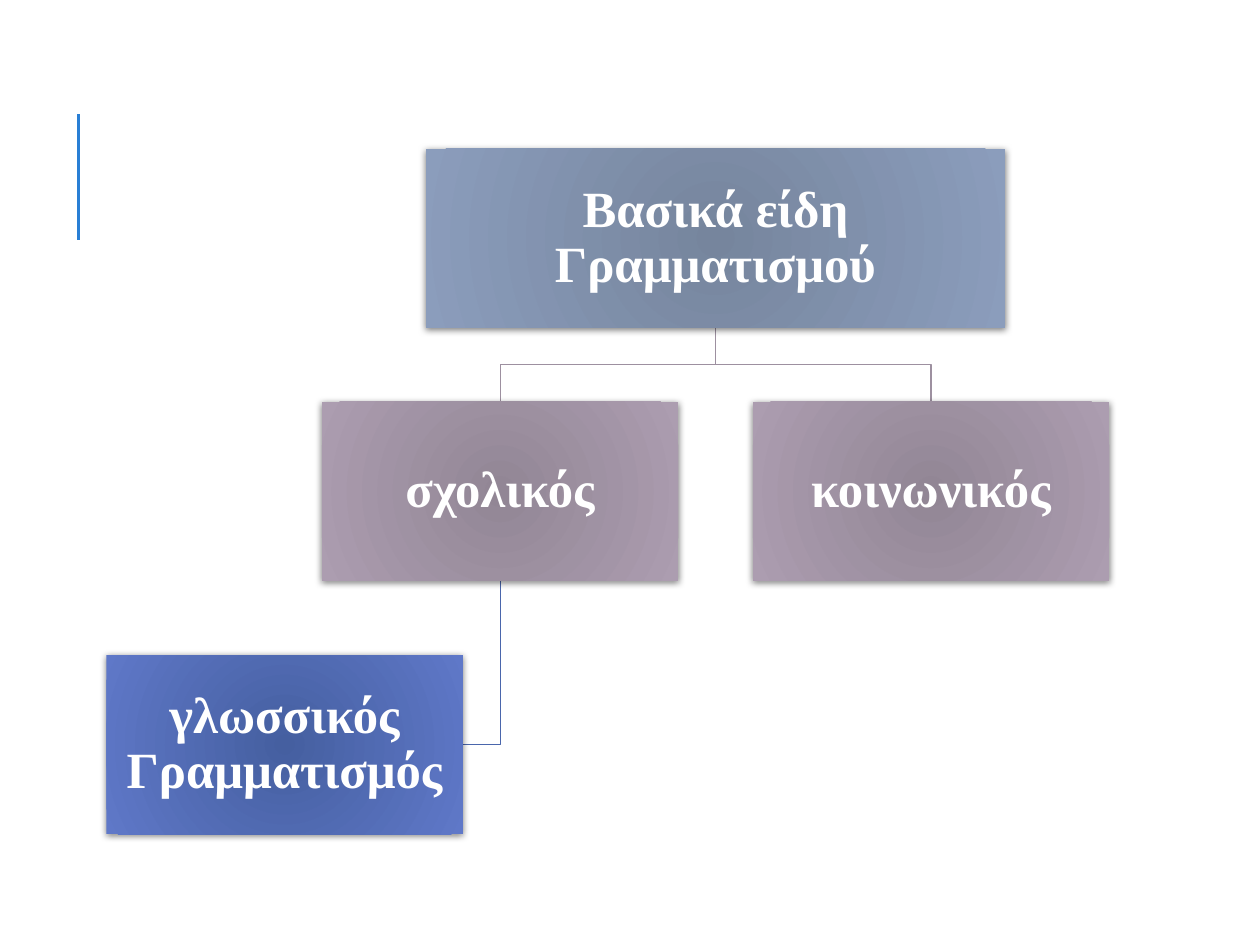
from lxml import etree
from pptx import Presentation
from pptx import util as u
from pptx.dml.color import RGBColor
from pptx.enum import shapes, text
from pptx.oxml import ns

# Content: key -> (wording, grid column of the centre, grid row, width, style)
BOXES = {
    "root": ("Βασικά είδη Γραμματισμού", 2, 0, 4.6, "root"),
    "school": ("σχολικός", 1, 1, 2.83, "kind"),
    "language": ("γλωσσικός Γραμματισμός", 0, 2, 2.83, "sub"),
    "social": ("κοινωνικός", 3, 1, 2.83, "kind"),
}
# Parent, child, side of the child where the line ends
LINKS = [("root", "social", "top"), ("school", "language", "right"),
         ("root", "school", "top")]

THEME = {
    "font": {"name": "Times New Roman", "size": u.Pt(29), "bold": True},
    "text": "FFFFFF",
    "accent": "297FD5",
    "accent_width": 1.5,
    "link_width": 0.75,
    # centre colour, edge colour, line colour
    "root": ("76859D", "8B9DBC", None),
    "kind": ("928695", "AC9DB0", "9D90A0"),
    "sub": ("455FA0", "5F78C8", "4A66AC"),
}

# Grid in inches
FIRST_CENTRE, COLUMN_STEP = 2.26, 1.71
FIRST_TOP, ROW_STEP, BOX_HEIGHT = 1.18, 2.01, 1.42

# Accent rule in points: x, bottom, x, top
ACCENT_RULE = (45, 137, 45, 65)


def color(key):
    return RGBColor.from_string(key)


def child(parent, tag, **values):
    element = etree.SubElement(parent, ns.qn(tag))
    for name, value in values.items():
        element.set(name, str(value))
    return element


def place(key):
    """Centre x, top y and width of a box."""
    _, column, row, width, _ = BOXES[key]
    return FIRST_CENTRE + column * COLUMN_STEP, FIRST_TOP + row * ROW_STEP, width


def set_line(line, rgb, width):
    line.color.rgb = color(rgb)
    line.width = u.Pt(width)


def radial_fill(shape, stops):
    shape.fill.gradient()
    for stop, rgb in zip(shape.fill.gradient_stops, stops):
        stop.color.rgb = color(rgb)
    gradient = shape._element.spPr.find(ns.qn("a:gradFill"))
    gradient.remove(gradient.find(ns.qn("a:lin")))
    circle = child(gradient, "a:path", path="circle")
    child(circle, "a:fillToRect", **dict.fromkeys("ltrb", 100000))


def soft_shadow(shape):
    shape.shadow.inherit = False
    effects = shape._element.spPr.find(ns.qn("a:effectLst"))
    shadow = child(effects, "a:outerShdw", blurRad=u.Pt(4), dist=u.Pt(1),
                   dir=90 * 60000, algn="ctr", rotWithShape=0)
    child(child(shadow, "a:srgbClr", val="000000"), "a:alpha", val=50000)


def add_box(page, key):
    wording, style = BOXES[key][0], BOXES[key][-1]
    centre, top, width = place(key)
    box = page.shapes.add_shape(
        shapes.MSO_SHAPE.RECTANGLE, u.Inches(centre - width / 2), u.Inches(top),
        u.Inches(width), u.Inches(BOX_HEIGHT))
    radial_fill(box, THEME[style][:2])
    box.line.fill.background()
    soft_shadow(box)

    frame = box.text_frame
    frame.word_wrap = True
    frame.vertical_anchor = text.MSO_ANCHOR.MIDDLE
    for side in ("left", "top", "right", "bottom"):
        setattr(frame, f"margin_{side}", u.Inches(0.02))
    para = frame.paragraphs[0]
    para.alignment = text.PP_ALIGN.CENTER
    para.line_spacing = 0.9
    span = para.add_run()
    span.text = wording
    for name, value in THEME["font"].items():
        setattr(span.font, name, value)
    span.font.color.rgb = color(THEME["text"])


def add_link(page, parent, target, side):
    start_x, parent_top, _ = place(parent)
    start_y = parent_top + BOX_HEIGHT
    end_x, end_y, width = place(target)
    if side == "top":
        middle = (start_y + end_y) / 2
        corners = [(start_x, middle), (end_x, middle), (end_x, end_y)]
    else:
        middle = end_y + BOX_HEIGHT / 2
        corners = [(start_x, middle), (end_x + width / 2, middle)]
    start, *points = [(u.Inches(x), u.Inches(y))
                      for x, y in [(start_x, start_y), *corners]]
    builder = page.shapes.build_freeform(*start)
    builder.add_line_segments(points, close=False)
    link = builder.convert_to_shape()
    link.fill.background()
    link.shadow.inherit = False
    set_line(link.line, THEME[BOXES[target][-1]][2], THEME["link_width"])


def main():
    deck = Presentation()
    deck.slide_width, deck.slide_height = u.Inches(10), u.Inches(7.5)
    page = deck.slides.add_slide(deck.slide_layouts[6])

    # Accent rule at the left
    rule = page.shapes.add_connector(
        shapes.MSO_CONNECTOR.STRAIGHT, *map(u.Pt, ACCENT_RULE))
    set_line(rule.line, THEME["accent"], THEME["accent_width"])
    child(rule._element.spPr, "a:effectLst")

    # Tree: lines behind, boxes in front
    for link in LINKS:
        add_link(page, *link)
    for key in BOXES:
        add_box(page, key)

    deck.save("out.pptx")


if __name__ == "__main__":
    main()
